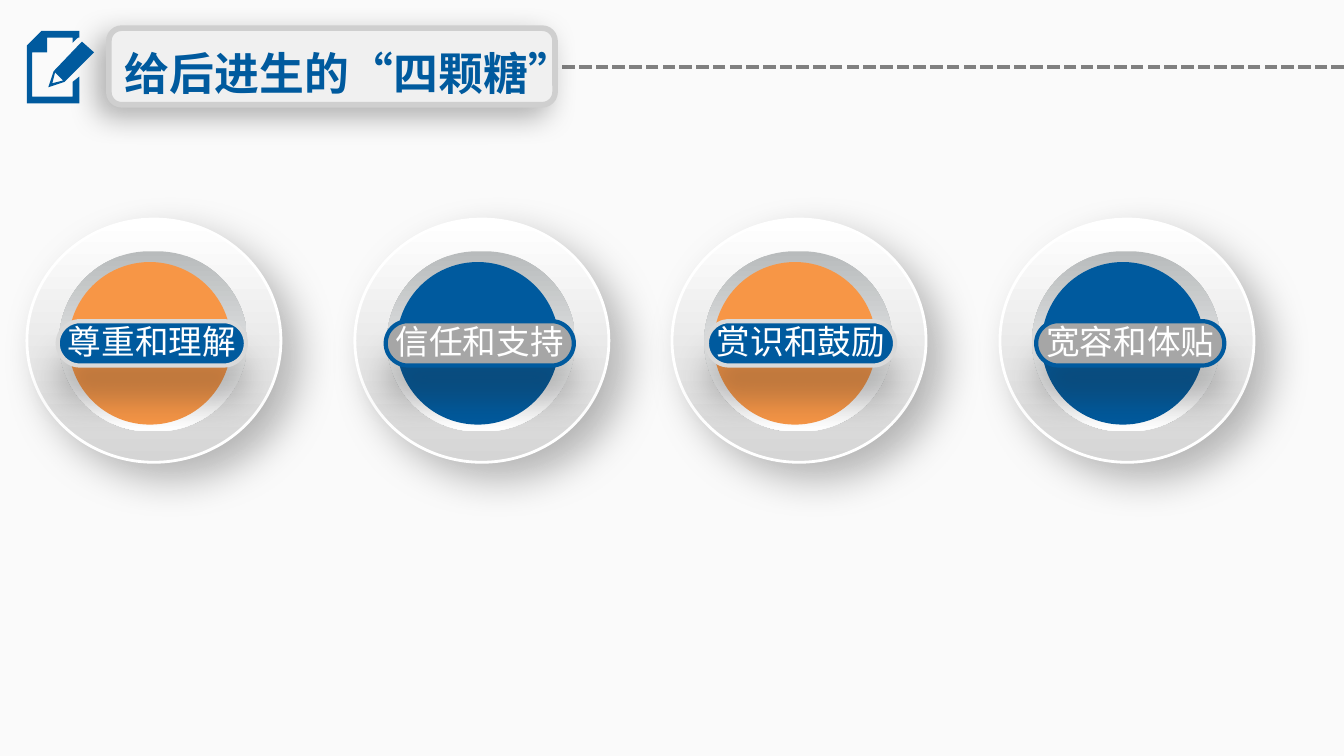
"""Build a slide with four round badges under a framed title."""
import lxml.etree
import pptx
import pptx.dml.color
import pptx.enum.dml
import pptx.enum.lang
import pptx.enum.shapes
import pptx.enum.text
import pptx.oxml.ns
import pptx.util

TITLE = "给后进生的“四颗糖”"
BADGES = [
    ("尊重和理解", "warm", 0.23),
    ("信任和支持", "cool", 0.23),
    ("赏识和鼓励", "warm", 0.26),
    ("宽容和体贴", "cool", 0.27),
]
THEME = {
    "font": "Arial", "title": 24, "label": 18,
    "blue": "005A9E", "white": "FFFFFF", "dash": "808080", "edge": "CFCFCF",
    "page": ("FAFAFA", "FCFCFC"), "panel": ("F0F0F0", "F1F1F1"),
    "ring": ("FFFFFF", "D5D5D5"), "well": ("B8BBBC", "FFFFFF"),
    "warm": {"disc": "F79646", "pill": "005A9E", "rim": "D9D9D9"},
    "cool": {"disc": "005A9E", "pill": "A6A6A6", "rim": "005A9E"},
}
PAPER = [[(54, 72), (24, 72), (24, 39), (35, 39), (35, 28), (54, 28), (54, 32),
          (58, 28), (59, 28), (59, 23), (31, 23), (20, 34), (20, 77), (59, 77),
          (59, 57), (54, 61)]]
PEN = [[(40, 53), (36, 65), (48, 61), (70, 39), (61, 31)],
       [(47, 60), (39, 62), (41, 54)]]
WIDTH = 10
HEIGHT = WIDTH * 9 / 16
LEFT, TOP, PAIR, STEP = 0.2, 1.63, 4.8, 2.44

Inches = pptx.util.Inches
Pt = pptx.util.Pt
KIND = pptx.enum.shapes.MSO_SHAPE


def color(code):
    return pptx.dml.color.RGBColor.from_string(code)


def paint(fill, tone, angle=90):
    if isinstance(tone, str):
        fill.solid()
        fill.fore_color.rgb = color(tone)
        return
    fill.gradient()
    fill.gradient_angle = 360 - angle
    for stop, code in zip(fill.gradient_stops, tone):
        stop.color.rgb = color(code)


def shade(shape, code, alpha, blur, dist, angle):
    qn = pptx.oxml.ns.qn
    sub = lxml.etree.SubElement
    effects = shape._element.spPr.find(qn("a:effectLst"))
    outer = sub(effects, qn("a:outerShdw"), blurRad=str(Pt(blur)), dist=str(Pt(dist)),
                dir=str(angle * 60000), algn="ctr", rotWithShape="0")
    tint = sub(outer, qn("a:srgbClr"), val=code)
    sub(tint, qn("a:alpha"), val=str(alpha * 1000))


def add_form(shapes, kind, box, tone, line=None, shadow=None, angle=90, adj=None):
    shape = shapes.add_shape(kind, *map(Inches, box))
    shape.shadow.inherit = False
    paint(shape.fill, tone, angle)
    if line:
        shape.line.color.rgb = color(line[0])
        shape.line.width = Pt(line[1])
    else:
        shape.line.fill.background()
    if shadow:
        shade(shape, *shadow)
    if adj:
        shape.adjustments[0] = adj
    return shape


def set_text(shape, text, size, code, align, bold=False):
    frame = shape.text_frame
    frame.text = text
    frame.word_wrap = False
    frame.auto_size = pptx.enum.text.MSO_AUTO_SIZE.SHAPE_TO_FIT_TEXT
    frame.vertical_anchor = pptx.enum.text.MSO_ANCHOR.TOP
    line = frame.paragraphs[0]
    line.alignment = align
    font = line.runs[0].font
    font.name, font.size, font.bold = THEME["font"], Pt(size), bold
    font.language_id = pptx.enum.lang.MSO_LANGUAGE_ID.SIMPLIFIED_CHINESE
    font.color.rgb = color(code)


def add_path(shapes, loops):
    first, *rest = loops
    pen = shapes.build_freeform(*first[0], scale=Inches(0.01))
    pen.add_line_segments(first[1:], close=True)
    for loop in rest:
        pen.move_to(*loop[0])
        pen.add_line_segments(loop[1:], close=True)
    shape = pen.convert_to_shape()
    shape.shadow.inherit = False
    paint(shape.fill, THEME["blue"])
    shape.line.fill.background()


def add_header(slide):
    shapes = slide.shapes
    rule = shapes.add_connector(pptx.enum.shapes.MSO_CONNECTOR.STRAIGHT,
                                Inches(WIDTH), Inches(0.5), Inches(3.19), Inches(0.5))
    rule.line.color.rgb = color(THEME["dash"])
    rule.line.width = Pt(2.25)
    rule.line.dash_style = pptx.enum.dml.MSO_LINE.SQUARE_DOT
    lxml.etree.SubElement(rule._element.spPr, pptx.oxml.ns.qn("a:effectLst"))
    panel = add_form(shapes, KIND.ROUNDED_RECTANGLE, (0.81, 0.21, 3.32, 0.57),
                     THEME["panel"], (THEME["edge"], 3), ("000000", 30, 16, 7, 135), 45)
    title = shapes.title
    title.left, title.top, title.width, title.height = map(Inches, (0.83, 0.29, 3.57, 0.5))
    set_text(title, TITLE, THEME["title"], THEME["blue"], pptx.enum.text.PP_ALIGN.LEFT, True)
    panel._element.addnext(title._element)
    icon = shapes.add_group_shape().shapes
    for loops in (PAPER, PEN):
        add_path(icon, loops)


def add_badge(slide, left, text, style, shift):
    tones = THEME[style]
    shapes = slide.shapes.add_group_shape().shapes
    add_form(shapes, KIND.OVAL, (left, TOP, 1.89, 1.81), THEME["ring"],
             (THEME["white"], 1.5), ("000000", 28, 22, 12, 45))
    add_form(shapes, KIND.ROUNDED_RECTANGLE, (left + 0.24, TOP + 0.24, 1.4, 1.34),
             THEME["well"], adj=0.5)
    add_form(shapes, KIND.OVAL, (left + 0.31, TOP + 0.32, 1.21, 1.21), tones["disc"])
    add_form(shapes, KIND.ROUNDED_RECTANGLE, (left + shift, TOP + 0.76, 1.4, 0.33),
             tones["pill"], (tones["rim"], 2.25), ("262626", 28, 18, 18, 90), adj=0.5)
    box = (left + shift - 0.03, TOP + 0.71, 1.46, 0.4)
    label = shapes.add_textbox(*map(Inches, box))
    set_text(label, text, THEME["label"], THEME["white"], pptx.enum.text.PP_ALIGN.CENTER)


def main():
    deck = pptx.Presentation()
    deck.slide_width, deck.slide_height = Inches(WIDTH), Inches(HEIGHT)
    slide = deck.slides.add_slide(deck.slide_layouts[5])
    paint(slide.background.fill, THEME["page"])
    add_header(slide)
    for index, badge in enumerate(BADGES):
        pair, side = divmod(index, 2)
        add_badge(slide, LEFT + pair * PAIR + side * STEP, *badge)
    deck.save("out.pptx")


if __name__ == "__main__":
    main()
